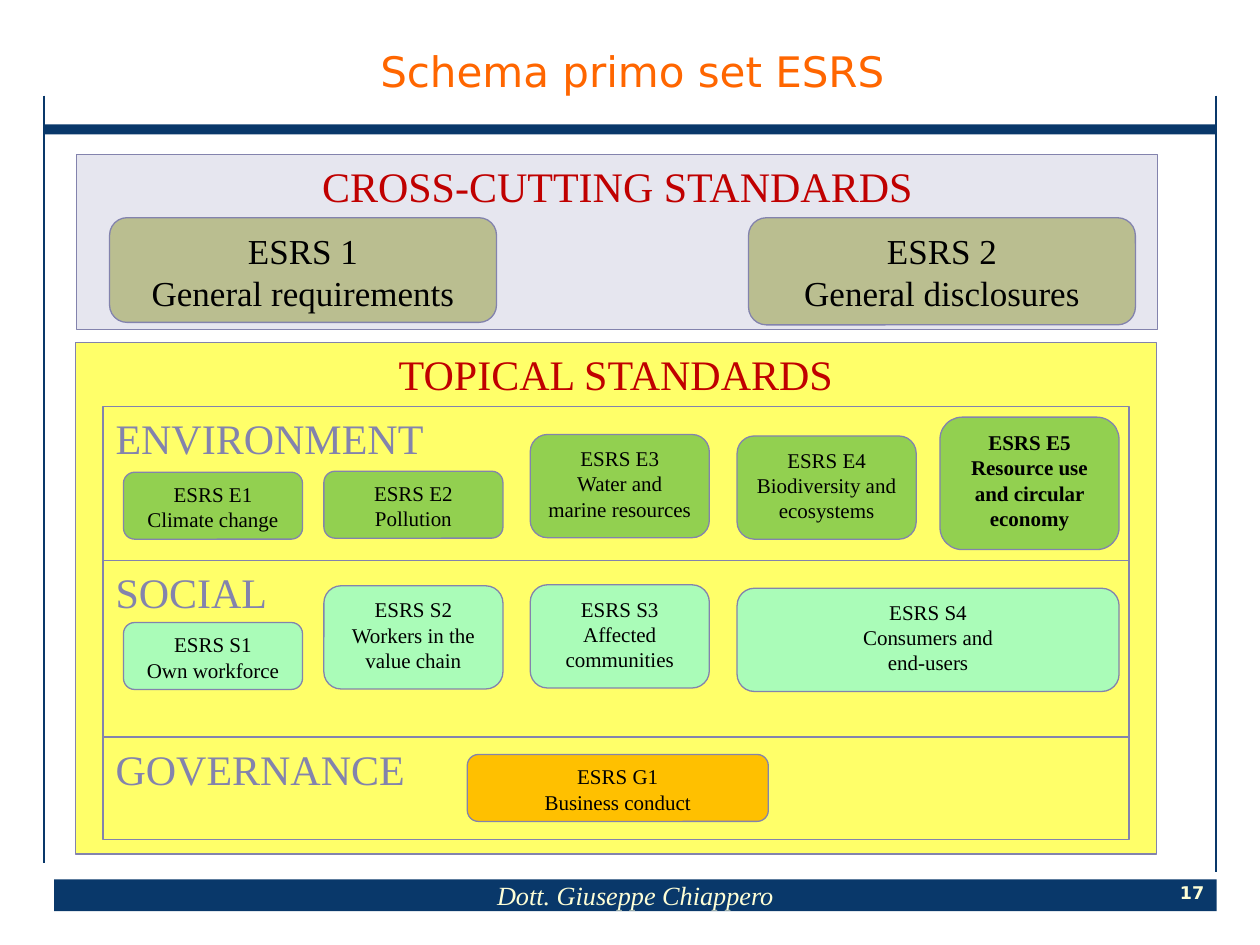
from lxml import etree
from pptx import Presentation
from pptx.dml.color import RGBColor
from pptx.enum.shapes import MSO_CONNECTOR, MSO_SHAPE
from pptx.enum.text import MSO_ANCHOR, PP_ALIGN
from pptx.oxml.ns import qn
from pptx.util import Cm, Pt

RECT, ROUNDED = MSO_SHAPE.RECTANGLE, MSO_SHAPE.ROUNDED_RECTANGLE
LEFT, CENTER = PP_ALIGN.LEFT, PP_ALIGN.CENTER
TOP, MIDDLE = MSO_ANCHOR.TOP, MSO_ANCHOR.MIDDLE


class Theme:
    SERIF, SANS = "Times New Roman", "DejaVu Sans"
    NAVY, CREAM, ORANGE = "09386A", "FEFED6", "FF6600"
    RED, BLACK, OUTLINE = "C00000", "000000", "8383AD"
    LAVENDER, YELLOW, KHAKI = "E6E6EF", "FFFF69", "BABE90"
    GREEN, MINT, AMBER = "92D050", "AAFCB8", "FFC000"
    HEADING, GENERAL, FOOTER, TOPIC, NUMBER = 24, 20, 15, 12, 10


def write(box, text, size, color, font=Theme.SERIF, align=CENTER, anchor=TOP,
          bold=False, italic=False):
    """Fill a box with one paragraph; newlines become line breaks."""
    frame = box.text_frame
    frame.word_wrap = True
    frame.vertical_anchor = anchor
    para = frame.paragraphs[0]
    para.text = text.replace("\n", "\v")
    para.alignment = align
    para.font.name = font
    para.font.size = Pt(size)
    para.font.color.rgb = RGBColor.from_string(color)
    para.font.bold = bold
    para.font.italic = italic


def add_box(kind, left, top, width, height, fill, outline=Theme.OUTLINE):
    """Add a flat shape, measured in centimetres."""
    box = page.shapes.add_shape(kind, Cm(left), Cm(top), Cm(width), Cm(height))
    box.shadow.inherit = False
    box.fill.solid()
    box.fill.fore_color.rgb = RGBColor.from_string(fill)
    if outline:
        box.line.color.rgb = RGBColor.from_string(outline)
        box.line.width = Pt(0.75)
    else:
        box.line.fill.background()
    return box


deck = Presentation()
deck.slide_width, deck.slide_height = Cm(25.4), Cm(19.05)
page = deck.slides.add_slide(deck.slide_layouts[6])

# Page frame
add_box(RECT, 0.89, 2.51, 23.6, 0.2, Theme.NAVY, None)
footer = add_box(RECT, 1.09, 17.73, 23.44, 0.64, Theme.NAVY, None)
write(footer, "Dott. Giuseppe Chiappero", Theme.FOOTER, Theme.CREAM,
      anchor=MIDDLE, italic=True)

for x, bottom in ((0.89, 17.4), (24.51, 17.58)):
    side = page.shapes.add_connector(
        MSO_CONNECTOR.STRAIGHT, Cm(x), Cm(1.93), Cm(x), Cm(bottom))
    side.line.color.rgb = RGBColor.from_string(Theme.NAVY)
    side.line.width = Pt(1)
    etree.SubElement(side._element.spPr, qn("a:effectLst"))

number = page.shapes.add_textbox(Cm(23.7), Cm(17.73), Cm(0.66), Cm(0.51))
number.text_frame.margin_left = number.text_frame.margin_right = 0
write(number, "17", Theme.NUMBER, Theme.CREAM, Theme.SANS, anchor=MIDDLE, bold=True)

title = page.shapes.add_textbox(Cm(1.14), Cm(0.33), Cm(23.22), Cm(2.21))
write(title, "Schema primo set ESRS", Theme.HEADING, Theme.ORANGE, Theme.SANS,
      anchor=MIDDLE)

# Two groups of standards
for text, left, top, height, fill in (
    ("CROSS-CUTTING STANDARDS", 1.55, 3.12, 3.53, Theme.LAVENDER),
    ("TOPICAL STANDARDS", 1.52, 6.91, 10.31, Theme.YELLOW),
):
    group = add_box(RECT, left, top, 21.79, height, fill)
    write(group, text, Theme.HEADING, Theme.RED)

for text, left, height in (
    ("ESRS 1\nGeneral requirements", 2.21, 2.11),
    ("ESRS 2\nGeneral disclosures", 15.09, 2.16),
):
    general = add_box(ROUNDED, left, 4.39, 7.8, height, Theme.KHAKI)
    write(general, text, Theme.GENERAL, Theme.BLACK)

# Topical areas
for text, top, height in (
    ("ENVIRONMENT", 8.2, 3.1),
    ("SOCIAL", 11.3, 3.58),
    ("GOVERNANCE", 14.86, 2.06),
):
    area = add_box(RECT, 2.08, top, 20.68, height, Theme.YELLOW)
    write(area, text, Theme.HEADING, Theme.OUTLINE, align=LEFT)

# Topical standards: text, left, top, width, height, fill
COLUMNS = (2.49, 6.53, 10.69, 14.86, 18.95)
NARROW, WIDE = 3.61, 7.7
TWO_LINES, THREE_LINES, FOUR_LINES = 1.35, 2.08, 2.67
topics = (
    ("ESRS E1\nClimate change", COLUMNS[0], 9.52, NARROW, TWO_LINES, Theme.GREEN),
    ("ESRS E2\nPollution", COLUMNS[1], 9.5, NARROW, TWO_LINES, Theme.GREEN),
    ("ESRS E3\nWater and marine resources", COLUMNS[2], 8.76, NARROW, THREE_LINES,
     Theme.GREEN),
    ("ESRS E4\nBiodiversity and ecosystems", COLUMNS[3], 8.79, NARROW, THREE_LINES,
     Theme.GREEN),
    ("ESRS E5\nResource use and circular economy", COLUMNS[4], 8.41, NARROW,
     FOUR_LINES, Theme.GREEN),
    ("ESRS S1\nOwn workforce", COLUMNS[0], 12.55, NARROW, TWO_LINES, Theme.MINT),
    ("ESRS S2\nWorkers in the value chain", COLUMNS[1], 11.81, NARROW, THREE_LINES,
     Theme.MINT),
    ("ESRS S3\nAffected\ncommunities", COLUMNS[2], 11.79, NARROW, THREE_LINES,
     Theme.MINT),
    ("ESRS S4\nConsumers and\nend-users", COLUMNS[3], 11.86, WIDE, THREE_LINES,
     Theme.MINT),
    ("ESRS G1\nBusiness conduct", 9.42, 15.21, 6.07, TWO_LINES, Theme.AMBER),
)
for text, left, top, width, height, fill in topics:
    topic = add_box(ROUNDED, left, top, width, height, fill)
    write(topic, text, Theme.TOPIC, Theme.BLACK, bold=text.startswith("ESRS E5"))

deck.save("out.pptx")
